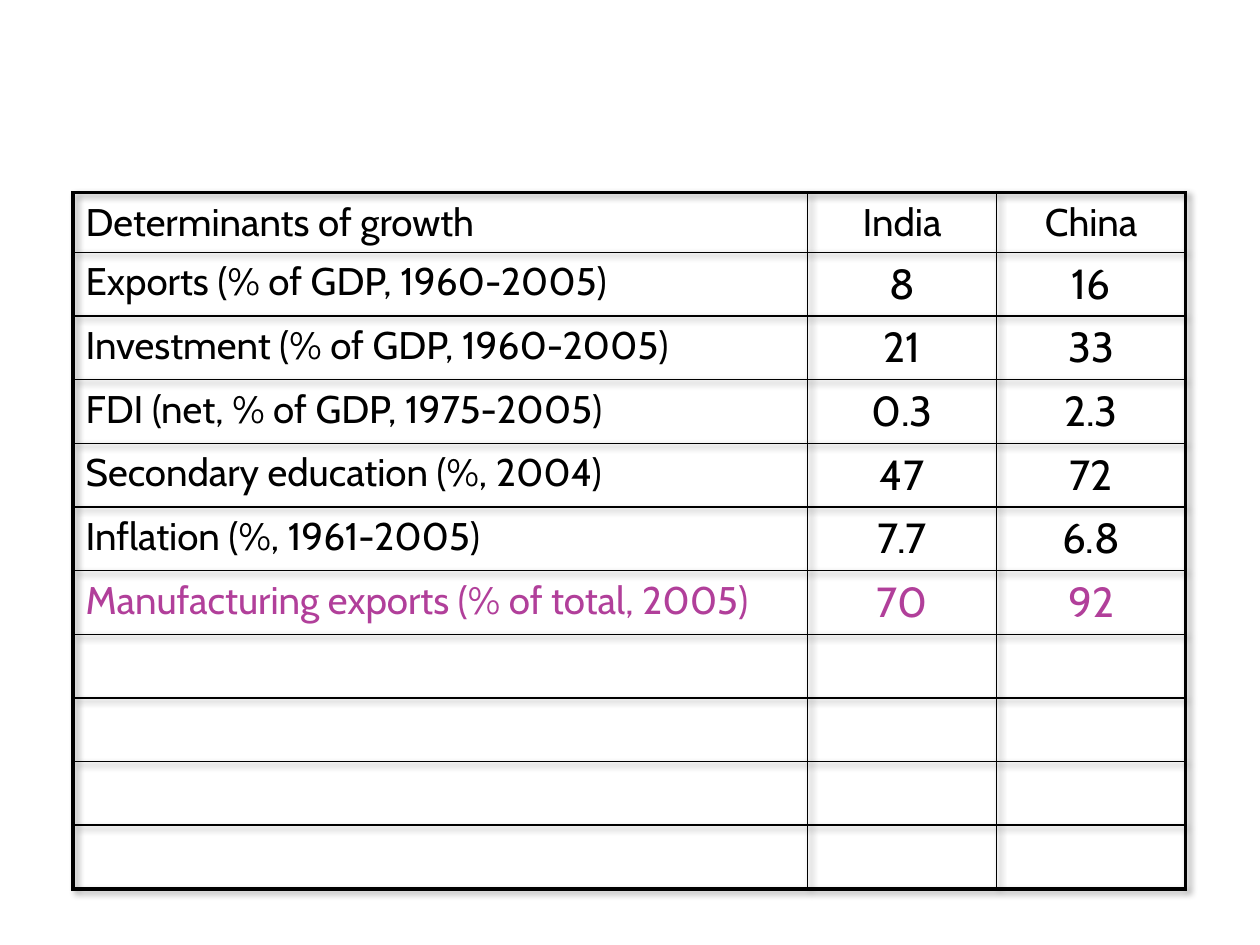
from typing import NamedTuple

from lxml import etree
from pptx import Presentation
from pptx.dml.color import RGBColor
from pptx.enum.text import PP_ALIGN as Align
from pptx.oxml import parse_xml
from pptx.oxml.ns import nsdecls, qn
from pptx.util import Inches, Pt

FONT = "Cabin"
BLACK = "000000"
PURPLE = "B13F9A"
THIN, THICK = 1, 2.25
COLUMN_WIDTHS = (5.83, 1.5, 1.5)
TABLE_HEIGHT, HEADER_HEIGHT = 5.52, 0.47
EMPTY_ROWS = 4
NO_STYLE = "{2D5ABB26-0587-4C30-8999-92F81FD0307C}"


class Row(NamedTuple):
    label: str = ""
    india: str = ""
    china: str = ""
    color: str = BLACK
    value_size: int = 24


ROWS = [
    Row("Determinants of growth", "India", "China", value_size=22),
    Row("Exports (% of GDP, 1960-2005)", "8", "16"),
    Row("Investment (% of GDP, 1960-2005)", "21", "33"),
    Row("FDI (net, % of GDP, 1975-2005)", "0.3", "2.3"),
    Row("Secondary education (%, 2004)", "47", "72"),
    Row("Inflation (%, 1961-2005)", "7.7", "6.8"),
    Row("Manufacturing exports (% of total, 2005)", "70", "92", PURPLE),
] + [Row()] * EMPTY_ROWS


def rgb(color: str) -> RGBColor:
    return RGBColor.from_string(color)


def write(frame, text: str, *, size: float, color: str = BLACK,
          align=Align.LEFT) -> None:
    paragraph = frame.paragraphs[0]
    paragraph.alignment = align
    run = paragraph.add_run()
    run.text = text
    font = run.font
    font.name, font.size = FONT, Pt(size)
    font.color.rgb = rgb(color)


def set_borders(cell, widths: dict[str, float]) -> None:
    properties = cell._tc.get_or_add_tcPr()
    for index, (side, width) in enumerate(widths.items()):
        properties.insert(index, parse_xml(
            f'<a:{side} {nsdecls("a")} w="{Pt(width)}"><a:solidFill>'
            f'<a:srgbClr val="{BLACK}"/></a:solidFill></a:{side}>'))


def style_table(table) -> None:
    """Drop the banded style and give the grid a soft shadow."""
    table.first_row = table.horz_banding = False
    properties = table._tbl.tblPr
    properties.find(qn("a:tableStyleId")).text = NO_STYLE
    effects = etree.Element(qn("a:effectLst"))
    shadow = etree.SubElement(effects, qn("a:outerShdw"), blurRad="50800",
                              dist="38100", dir="2700000")
    color = etree.SubElement(shadow, qn("a:srgbClr"), val=BLACK)
    etree.SubElement(color, qn("a:alpha"), val="40000")
    properties.insert(0, effects)


def add_growth_table(slide) -> None:
    table = slide.shapes.add_table(
        len(ROWS), len(COLUMN_WIDTHS), Inches(0.58), Inches(1.53),
        Inches(sum(COLUMN_WIDTHS)), Inches(TABLE_HEIGHT)).table
    style_table(table)
    for column, width in zip(table.columns, COLUMN_WIDTHS):
        column.width = Inches(width)

    # The rows below the header share the remaining height equally
    last_row, last_column = len(ROWS) - 1, len(COLUMN_WIDTHS) - 1
    row_height = (TABLE_HEIGHT - HEADER_HEIGHT) / last_row
    for r, row in enumerate(ROWS):
        table.rows[r].height = Inches(row_height if r else HEADER_HEIGHT)
        for c, text in enumerate((row.label, row.india, row.china)):
            cell = table.cell(r, c)
            cell.fill.background()
            set_borders(cell, {
                "lnL": THICK if c == 0 else THIN,
                "lnR": THICK if c == last_column else THIN,
                "lnT": THICK if r == 0 else THIN,
                "lnB": THICK if r == last_row else THIN,
            })
            if text:
                write(cell.text_frame, text, color=row.color,
                      size=row.value_size if c else 22,
                      align=Align.CENTER if c else Align.LEFT)


def main() -> None:
    presentation = Presentation()
    presentation.slide_width, presentation.slide_height = Inches(10), Inches(7.5)
    slide = presentation.slides.add_slide(presentation.slide_layouts[6])

    # Table of growth determinants
    add_growth_table(slide)
    presentation.save("out.pptx")


if __name__ == "__main__":
    main()
